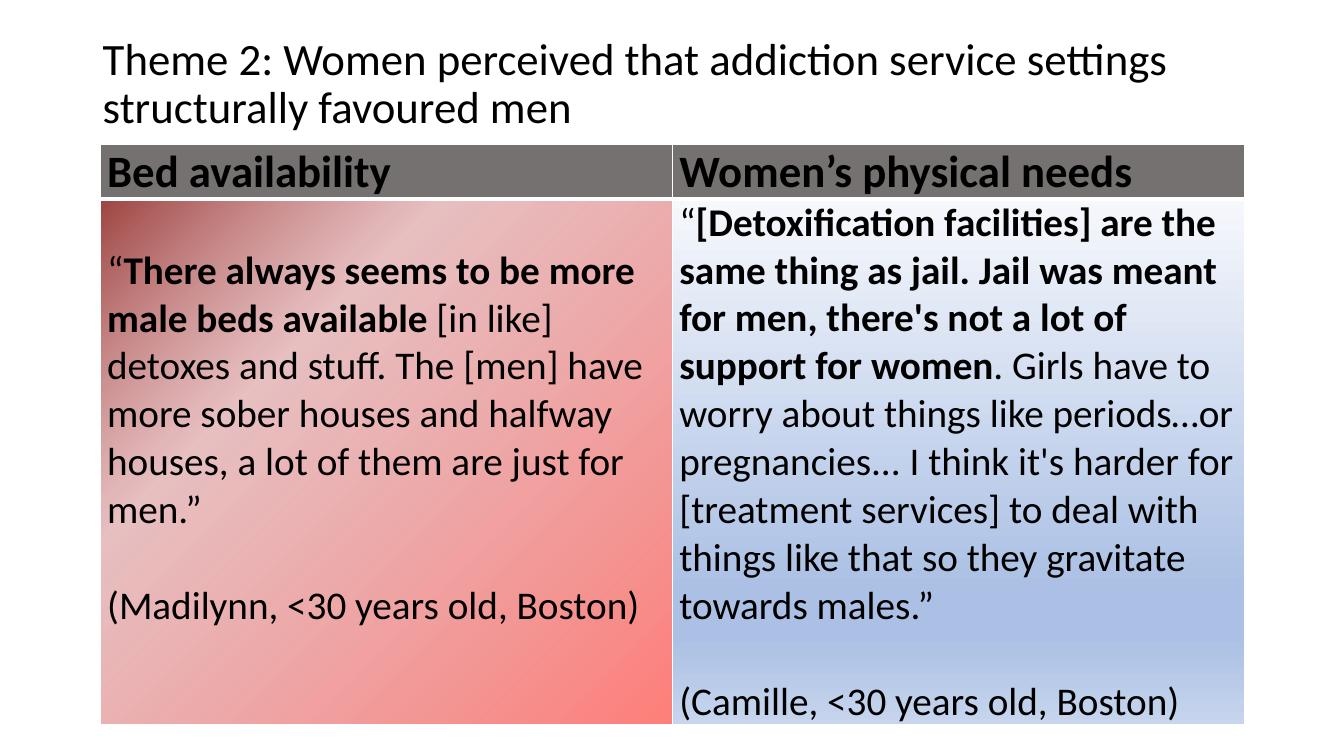
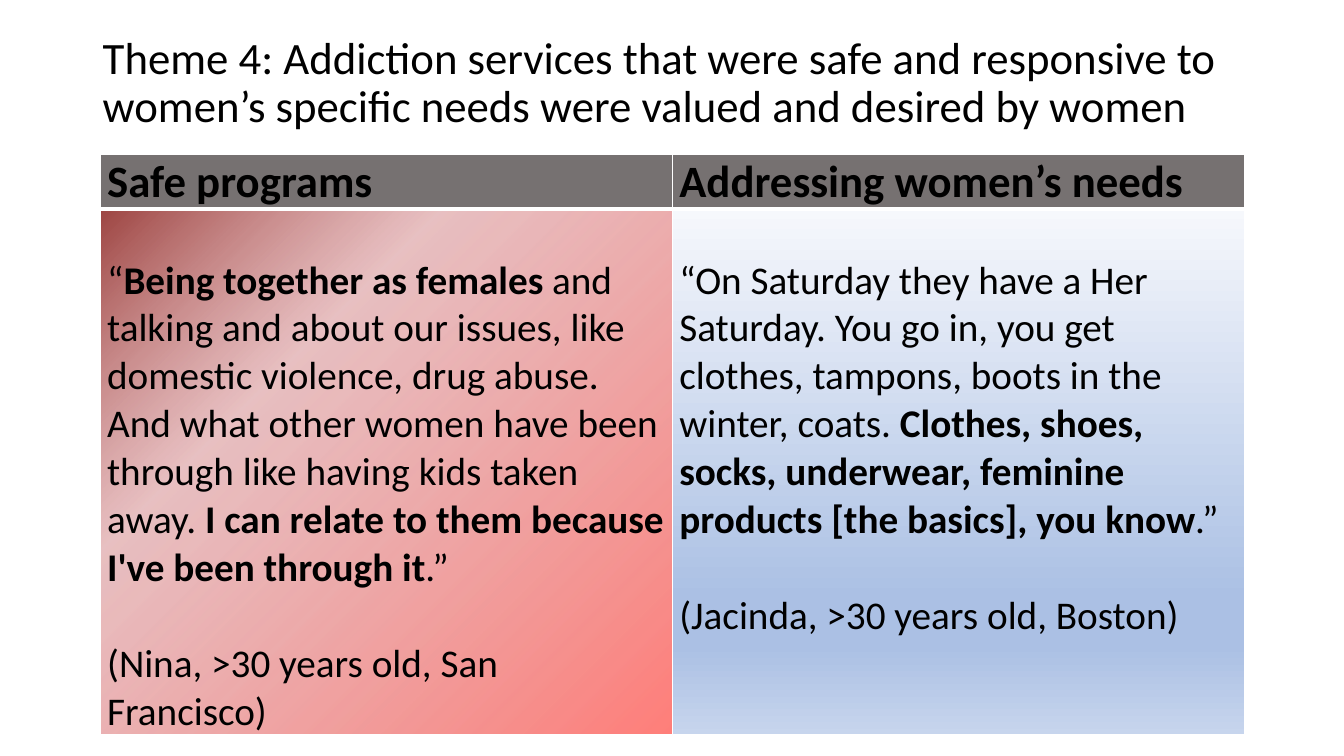
import pptx
import pptx.util
import pptx.dml.color
import pptx.enum.text
import pptx.oxml
import pptx.oxml.ns
from pptx.util import Cm

FONT = "Calibri"
BLACK, WHITE, GREY = "000000", "FFFFFF", "767171"
LINE_28 = 1.21  # height in cm of one 28 pt line
HEADER_H, BODY_H = 1.37, 13.26

# Gradient stops: position %, colour, opacity %
RED = {"stops": [(0, "9D4542", 100), (31, "DA9A9D", 62), (100, "FF7E79", 100)], "angle": 45}
BLUE = {"stops": [(0, "F6F8FC", 100), (74, "ABC0E4", 100), (83, "ABC0E4", 100),
                  (100, "C7D5ED", 100)], "angle": 90}

SLIDES = [
    {
        "title": "Theme 2: Women perceived that addiction service settings structurally favoured men",
        "title_box": (2.34, 1.02, 30.25, 2.24),
        "table_box": (2.52, 3.64, 28.84),
        "columns": [
            {"head": "Bed availability", "fill": RED, "top": LINE_28,
             "quote": "“**There always seems to be more male beds available** [in like] detoxes and "
                      "stuff. The [men] have more sober houses and halfway houses, a lot of them "
                      "are just for men.”",
             "source": "(Madilynn, <30 years old, Boston)"},
            {"head": "Women’s physical needs", "fill": BLUE, "top": 0,
             "quote": "“**[Detoxification facilities] are the same thing as jail. Jail was meant "
                      "for men, there's not a lot of support for women**. Girls have to worry about "
                      "things like periods…or pregnancies... I think it's harder for [treatment "
                      "services] to deal with things like that so they gravitate towards males.”",
             "source": "(Camille, <30 years old, Boston)"},
        ],
    },
    {
        "title": "Theme 4: Addiction services that were safe and responsive to women’s specific "
                 "needs were valued and desired by women",
        "title_box": (2.34, 1.02, 29.95, 2.18),
        "table_box": (2.52, 3.89, 28.84),
        "columns": [
            {"head": "Safe programs", "fill": RED, "top": LINE_28,
             "quote": "“**Being together as females **and talking and about our issues, like "
                      "domestic violence, drug abuse. And what other women have been through like "
                      "having kids taken away. **I can relate to them because I've been through "
                      "it**.”",
             "source": "(Nina, >30 years old, San Francisco)"},
            {"head": "Addressing women’s needs", "fill": BLUE, "top": LINE_28,
             "quote": "“On Saturday they have a Her Saturday. You go in, you get clothes, tampons, "
                      "boots in the winter, coats. **Clothes, shoes, socks, underwear, feminine "
                      "products [the basics], you know**.”",
             "source": "(Jacinda, >30 years old, Boston)"},
        ],
    },
]


def rgb(value):
    return pptx.dml.color.RGBColor.from_string(value)


def write(p, text, size=28, bold=False, color=BLACK, before=0, spacing=1.0):
    """Fill a paragraph; text between ** marks switches bold."""
    p.space_before = Cm(before)
    p.line_spacing = spacing
    for i, part in enumerate(text.split("**")):
        r = p.add_run()
        r.text = part
        r.font.name = FONT
        r.font.size = pptx.util.Pt(size)
        r.font.bold = bold or i % 2 == 1
        r.font.color.rgb = rgb(color)


def add_xml(parent, xml):
    parent.append(pptx.oxml.parse_xml(xml.replace(">", f" {pptx.oxml.ns.nsdecls('a')}>", 1)))


def set_borders(cell, top=1, bottom=1):
    for side, width in (("L", 1), ("R", 1), ("T", top), ("B", bottom)):
        add_xml(cell._tc.get_or_add_tcPr(),
                f'<a:ln{side} w="{width * 12700}"><a:solidFill><a:srgbClr val="{WHITE}"/>'
                f'</a:solidFill></a:ln{side}>')


def set_gradient(cell, stops, angle):
    gs = "".join(f'<a:gs pos="{pos * 1000}"><a:srgbClr val="{color}">'
                 f'<a:alpha val="{alpha * 1000}"/></a:srgbClr></a:gs>'
                 for pos, color, alpha in stops)
    add_xml(cell._tc.get_or_add_tcPr(),
            f'<a:gradFill rotWithShape="1"><a:gsLst>{gs}</a:gsLst>'
            f'<a:lin ang="{angle * 60000}" scaled="0"/></a:gradFill>')


def set_margins(cell, top=0):
    cell.margin_left = cell.margin_right = Cm(0.18)
    cell.margin_top, cell.margin_bottom = Cm(top), Cm(0)


def add_title(s, box, text):
    tf = s.shapes.add_textbox(*map(Cm, box)).text_frame
    tf.word_wrap = True
    tf.vertical_anchor = pptx.enum.text.MSO_ANCHOR.MIDDLE
    write(tf.paragraphs[0], text, size=32, spacing=0.9)


def add_quote_table(s, box, columns):
    left, top, width = box
    table = s.shapes.add_table(2, len(columns), Cm(left), Cm(top), Cm(width),
                               Cm(HEADER_H + BODY_H)).table
    table.rows[0].height, table.rows[1].height = Cm(HEADER_H), Cm(BODY_H)
    for i, column in enumerate(columns):
        table.columns[i].width = Cm(width / len(columns))

        # Heading
        head = table.cell(0, i)
        set_margins(head)
        set_borders(head, bottom=3)
        head.fill.solid()
        head.fill.fore_color.rgb = rgb(GREY)
        write(head.text_frame.paragraphs[0], column["head"], size=32, bold=True)

        # Quote and speaker
        body = table.cell(1, i)
        set_margins(body, top=column["top"])
        set_borders(body, top=3)
        set_gradient(body, **column["fill"])
        tf = body.text_frame
        write(tf.paragraphs[0], column["quote"])
        write(tf.add_paragraph(), column["source"], before=LINE_28)


def main():
    prs = pptx.Presentation()
    prs.slide_width, prs.slide_height = Cm(33.87), Cm(19.05)
    for content in SLIDES:
        s = prs.slides.add_slide(prs.slide_layouts[6])
        s.background.fill.solid()
        s.background.fill.fore_color.rgb = rgb(WHITE)
        add_title(s, content["title_box"], content["title"])
        add_quote_table(s, content["table_box"], content["columns"])
    prs.save("out.pptx")


if __name__ == "__main__":
    main()
